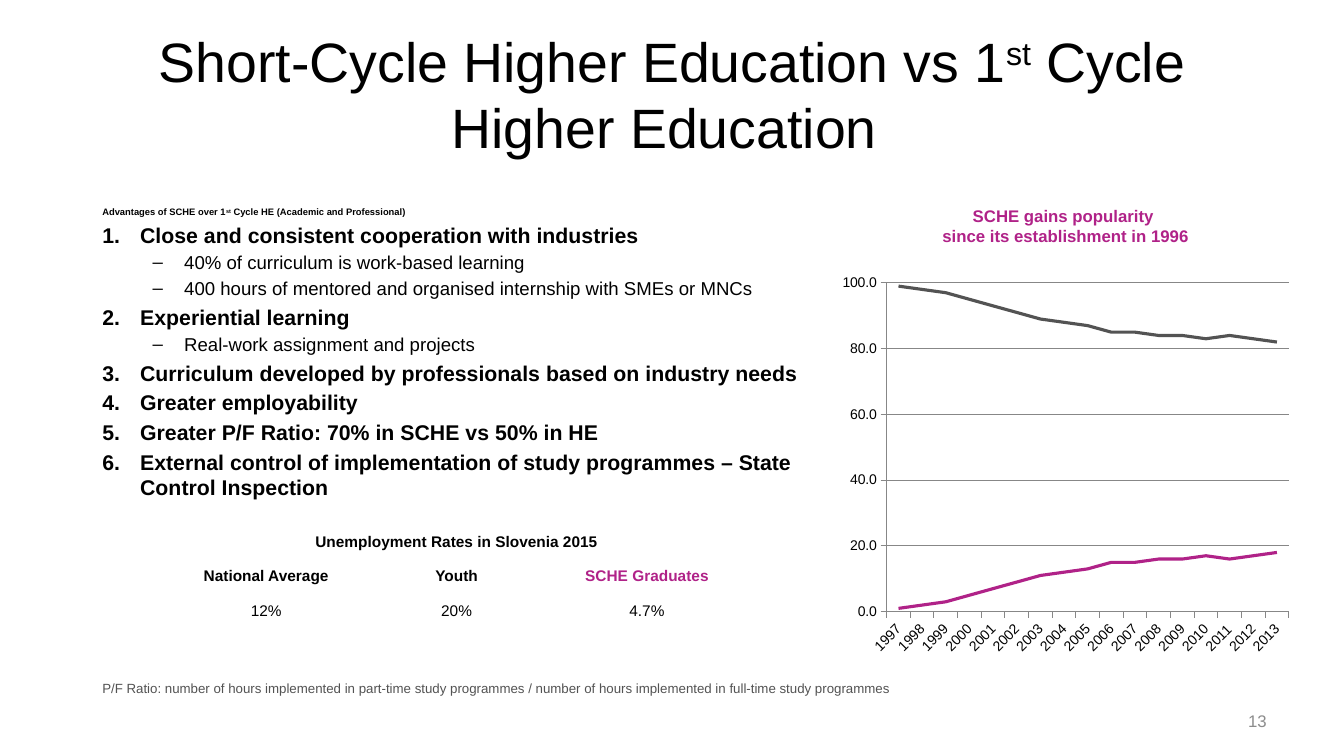
"""Build a slide comparing short-cycle with first-cycle higher education."""
from lxml import etree
from pptx import Presentation
from pptx.chart.data import CategoryChartData
from pptx.dml.color import RGBColor
from pptx.enum.chart import XL_CHART_TYPE, XL_MARKER_STYLE, XL_TICK_MARK
from pptx.enum.text import MSO_ANCHOR, PP_ALIGN
from pptx.oxml.ns import qn
from pptx.util import Pt

LEFT, CENTER, RIGHT = PP_ALIGN.LEFT, PP_ALIGN.CENTER, PP_ALIGN.RIGHT
TOP, MIDDLE = MSO_ANCHOR.TOP, MSO_ANCHOR.MIDDLE
LINE, OUTSIDE = XL_CHART_TYPE.LINE, XL_TICK_MARK.OUTSIDE
NO_MARKER = XL_MARKER_STYLE.NONE

BLACK = RGBColor(0x00, 0x00, 0x00)
PURPLE = RGBColor(0xB0, 0x22, 0x88)
DARK_GRAY = RGBColor(0x53, 0x53, 0x53)
PAGE_GRAY = RGBColor(0x8C, 0x8C, 0x8C)
AXIS_GRAY = RGBColor(0x87, 0x87, 0x87)
FONT = "Arial"

TITLE = "Short-Cycle Higher Education vs 1^st^ Cycle Higher Education "
INTRO = "Advantages of SCHE over 1^st^ Cycle HE (Academic and Professional)"
ADVANTAGES = [
    ("Close and consistent cooperation with industries", [
        "40% of curriculum is work-based learning",
        "400 hours of mentored and organised internship with SMEs or MNCs"]),
    ("Experiential learning", ["Real-work assignment and projects"]),
    ("Curriculum developed by professionals based on industry needs", []),
    ("Greater employability", []),
    ("Greater P/F Ratio: 70% in SCHE vs 50% in HE", []),
    ("External control of implementation of study programmes – State Control Inspection", []),
]
CHART_TITLE = "SCHE gains popularity \nsince its establishment in 1996"
YEARS = range(1997, 2014)
SCHE_SHARE = [1, 2, 3, 5, 7, 9, 11, 12, 13, 15, 15, 16, 16, 17, 16, 17, 18]
RATES_TITLE = "Unemployment Rates in Slovenia 2015"
RATES = [("National Average", "12%"), ("Youth", "20%"), ("SCHE Graduates", "4.7%")]
FOOTNOTE = ("P/F Ratio: number of hours implemented in part-time study programmes / "
            "number of hours implemented in full-time study programmes")
PAGE_NUMBER = "13"


def write(para, text, size, color=BLACK, bold=False, align=LEFT):
    """Fill a paragraph, with carets around superscript and newlines as breaks."""
    para.alignment = align
    for row, line in enumerate(text.split("\n")):
        if row:
            para.add_line_break()
        for place, piece in enumerate(line.split("^")):
            span = para.add_run()
            span.text = piece
            span.font.name = FONT
            span.font.size = Pt(size)
            span.font.bold = bold
            span.font.color.rgb = color
            if place % 2:
                span.font._element.set("baseline", "30000")


def add_box(page, left, top, width, height, anchor=TOP):
    """Add a wrapping text box and return its text frame."""
    box = page.shapes.add_textbox(Pt(left), Pt(top), Pt(width), Pt(height))
    box.text_frame.word_wrap = True
    box.text_frame.vertical_anchor = anchor
    return box.text_frame


def add_item(frame, text, size, bullet, indent, hang, level=0, bold=False):
    """Append a bulleted or numbered paragraph, spaced by a fifth of its size."""
    para = frame.add_paragraph()
    para.level = level
    para.space_before = Pt(size / 5)
    properties = para._p.get_or_add_pPr()
    properties.set("marL", str(Pt(indent)))
    properties.set("indent", str(-Pt(hang)))
    tag, attribute, value = bullet
    etree.SubElement(properties, qn("a:buFont")).set("typeface", FONT)
    etree.SubElement(properties, qn(tag)).set(attribute, value)
    write(para, text, size, bold=bold)


def add_advantages(page):
    """Add the numbered advantages with their details."""
    frame = add_box(page, 66, 144, 520.5, 214.5)
    write(frame.paragraphs[0], INTRO, 6.7, bold=True)
    for advantage, details in ADVANTAGES:
        add_item(frame, advantage, 15.2, ("a:buAutoNum", "type", "arabicPeriod"),
                 27, 27, bold=True)
        for detail in details:
            add_item(frame, detail, 13.3, ("a:buChar", "char", "–"), 58.5, 22.5, level=1)


def add_share_chart(page):
    """Add the line chart of both shares."""
    data = CategoryChartData(number_format="0.0")
    data.categories = [str(year) for year in YEARS]
    data.add_series("Series 1", SCHE_SHARE)
    data.add_series("Series 2", [100 - share for share in SCHE_SHARE])
    chart = page.shapes.add_chart(LINE, Pt(595.2), Pt(190.8), Pt(332), Pt(282.2), data).chart
    chart.has_legend = False
    chart.has_title = False
    chart.font.name = FONT
    chart.font.size = Pt(10)
    chart.font.color.rgb = BLACK
    chart.plots[0].vary_by_categories = False
    for series, color in zip(chart.plots[0].series, (PURPLE, DARK_GRAY)):
        series.smooth = False
        series.format.line.color.rgb = color
        series.format.line.width = Pt(2.25)
        series.marker.style = NO_MARKER
    values, years = chart.value_axis, chart.category_axis
    values.minimum_scale, values.maximum_scale, values.major_unit = 0, 100, 20
    values.has_major_gridlines = True
    values.tick_labels.number_format = "0.0"
    values.tick_labels.number_format_is_linked = False
    for axis in (values, years):
        axis.major_tick_mark = OUTSIDE
        axis.tick_labels.font.size = Pt(10)
    for edge in (values, years, values.major_gridlines):
        edge.format.line.color.rgb = AXIS_GRAY
        edge.format.line.width = Pt(0.75)
    years._element.find(qn("c:txPr")).find(qn("a:bodyPr")).set("rot", "-2700000")


def add_rates_table(page):
    """Add the unemployment table under one merged heading."""
    column, row = 136, 24.75
    table = page.shapes.add_table(3, 3, Pt(122.2), Pt(377.3), Pt(3 * column), Pt(3 * row)).table
    table.first_row = table.horz_banding = False
    for cell in table.iter_cells():
        cell.fill.background()
    for line in table.rows:
        line.height = Pt(row)
    table.cell(0, 0).merge(table.cell(0, 2))
    write(table.cell(0, 0).text_frame.paragraphs[0], RATES_TITLE, 11, bold=True, align=CENTER)
    for place, (group, rate) in enumerate(RATES):
        table.columns[place].width = Pt(column)
        color = PURPLE if group.startswith("SCHE") else BLACK
        write(table.cell(1, place).text_frame.paragraphs[0], group, 11, color, True, CENTER)
        write(table.cell(2, place).text_frame.paragraphs[0], rate, 11, align=CENTER)


def main():
    """Build and save the deck."""
    deck = Presentation()
    deck.slide_width, deck.slide_height = Pt(960), Pt(540)
    page = deck.slides.add_slide(deck.slide_layouts[6])
    title = add_box(page, 48, 21.6, 864, 90, MIDDLE)
    write(title.paragraphs[0], TITLE, 39.6, align=CENTER)
    add_advantages(page)
    number = add_box(page, 688, 500.5, 224, 28.75, MIDDLE)
    write(number.paragraphs[0], PAGE_NUMBER, 12, PAGE_GRAY, align=RIGHT)
    add_share_chart(page)
    heading = add_box(page, 595.2, 143.6, 332, 36)
    write(heading.paragraphs[0], CHART_TITLE, 12, PURPLE, True, CENTER)
    add_rates_table(page)
    footnote = add_box(page, 66, 482.4, 610, 18.7)
    write(footnote.paragraphs[0], FOOTNOTE, 9.5, DARK_GRAY)
    deck.save("out.pptx")


if __name__ == "__main__":
    main()
